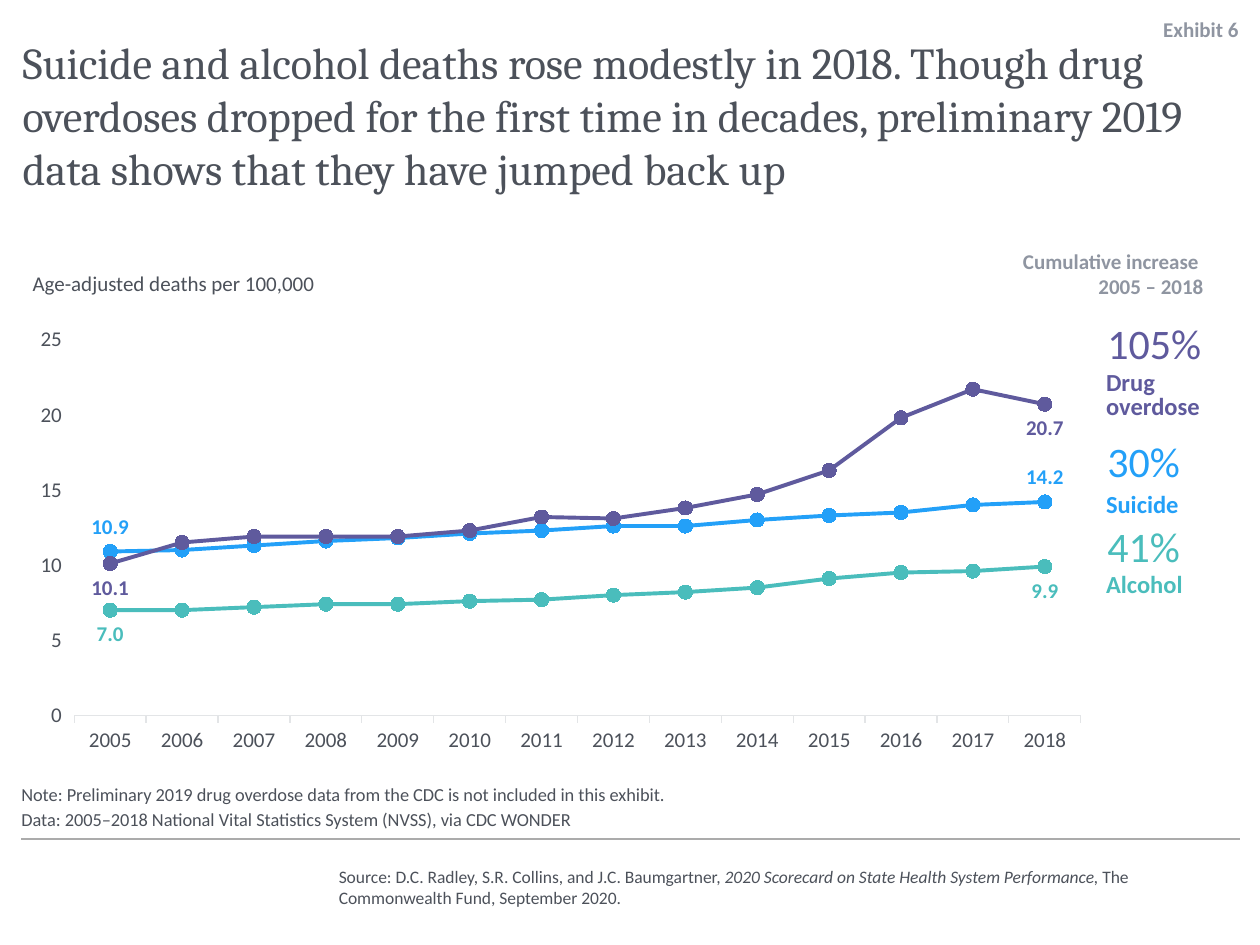
import dataclasses

import pptx
import pptx.chart.data
import pptx.dml.color
import pptx.enum.chart
import pptx.enum.shapes
import pptx.enum.text
import pptx.oxml
import pptx.oxml.ns
import pptx.util
from pptx.util import Inches

ANCHOR = pptx.enum.text.MSO_ANCHOR
ALIGN = pptx.enum.text.PP_ALIGN
LABEL = pptx.enum.chart.XL_LABEL_POSITION


@dataclasses.dataclass(frozen=True)
class Theme:
    """Colours, fonts and type sizes of the slide."""

    ink: str = "4C515A"
    muted: str = "8F95A1"
    rule: str = "ABABAB"
    axis: str = "E3E5E7"
    alcohol: str = "4ABDBC"
    suicide: str = "23A0F8"
    drugs: str = "5F5A9D"
    heading_font: str = "Cambria"
    body_font: str = "Calibri"
    title_size: float = 25.2
    increase_size: float = 24
    cause_size: float = 14
    label_size: float = 12
    note_size: float = 10.5
    source_size: float = 10


THEME = Theme()

YEARS = [str(year) for year in range(2005, 2019)]
DEATH_RATES = [
    ("Alcohol", THEME.alcohol, LABEL.BELOW,
     [7, 7, 7.2, 7.4, 7.4, 7.6, 7.7, 8, 8.2, 8.5, 9.1, 9.5, 9.6, 9.9]),
    ("Suicide", THEME.suicide, LABEL.ABOVE,
     [10.9, 11, 11.3, 11.6, 11.8, 12.1, 12.3, 12.6, 12.6, 13, 13.3, 13.5, 14, 14.2]),
    ("Drug overdose", THEME.drugs, LABEL.BELOW,
     [10.1, 11.5, 11.9, 11.9, 11.9, 12.3, 13.2, 13.1, 13.8, 14.7, 16.3, 19.8, 21.7, 20.7]),
]
INCREASES = [
    ("105%", 2.47, "Drug overdose", 2.9, 0.5, THEME.drugs),
    ("30%", 3.41, "Suicide", 3.83, 0.34, THEME.suicide),
    ("41%", 4.08, "Alcohol", 4.47, 0.34, THEME.alcohol),
]


def rgb(colour):
    """Turn a hex string into a colour value."""
    return pptx.dml.color.RGBColor.from_string(colour)


def style_font(font, size, colour, bold=False, name=THEME.body_font):
    """Set the face, size, weight and colour of a font."""
    font.name = name
    font.size = pptx.util.Pt(size)
    font.bold = bold
    font.color.rgb = rgb(colour)


def add_text(slide, box, paragraphs, size, colour, bold=False, name=THEME.body_font,
             align=ALIGN.LEFT, anchor=ANCHOR.TOP, inset=True, gap=0, leading=None):
    """Add a wrapped text box whose paragraphs are lists of (text, italic) runs."""
    frame = slide.shapes.add_textbox(*map(Inches, box)).text_frame
    frame.word_wrap = True
    frame.vertical_anchor = anchor
    if not inset:
        frame.margin_left = frame.margin_right = frame.margin_top = frame.margin_bottom = 0
    for index, runs in enumerate(paragraphs):
        paragraph = frame.add_paragraph() if index else frame.paragraphs[0]
        paragraph.alignment = align
        if index and gap:
            paragraph.space_before = pptx.util.Pt(gap)
        if leading:
            paragraph.line_spacing = pptx.util.Pt(leading)
        style_font(paragraph.font, size, colour, bold, name)
        for text, italic in runs:
            run = paragraph.add_run()
            run.text = text
            if italic:
                run.font.italic = True


def plain(*lines):
    """Make one upright paragraph of each line."""
    return [[(line, False)] for line in lines]


def add_rule(slide, left, right, top):
    """Add the thin horizontal rule above the source."""
    rule = slide.shapes.add_connector(
        pptx.enum.shapes.MSO_CONNECTOR.STRAIGHT,
        Inches(left), Inches(top), Inches(right), Inches(top))
    rule.line.color.rgb = rgb(THEME.rule)
    rule.line.width = pptx.util.Pt(0.75)
    rule._element.spPr.append(
        pptx.oxml.parse_xml(f'<a:effectLst {pptx.oxml.ns.nsdecls("a")}/>'))


def style_series(series, colour, label_position):
    """Colour one line with its markers and label its first and last points."""
    series.smooth = False
    series.format.line.color.rgb = rgb(colour)
    series.format.line.width = pptx.util.Pt(2.25)
    series.marker.style = pptx.enum.chart.XL_MARKER_STYLE.CIRCLE
    series.marker.size = 8
    series.marker.format.fill.solid()
    series.marker.format.fill.fore_color.rgb = rgb(colour)
    series.marker.format.line.color.rgb = rgb(colour)
    series.data_labels.show_value = False
    for point in (0, len(YEARS) - 1):
        label = series.points[point].data_label
        style_font(label.font, THEME.label_size, colour, bold=True)
        label.position = label_position


def fix_plot_area(chart, **fractions):
    """Pin the inner plot area to fractions of the chart."""
    plot_area = chart._chartSpace.chart.plotArea
    for old in plot_area.findall(pptx.oxml.ns.qn("c:layout")):
        plot_area.remove(old)
    settings = {"layoutTarget": "inner", "xMode": "edge", "yMode": "edge", **fractions}
    body = "".join(f'<c:{tag} val="{value}"/>' for tag, value in settings.items())
    plot_area.insert(0, pptx.oxml.parse_xml(
        f'<c:layout {pptx.oxml.ns.nsdecls("c")}><c:manualLayout>{body}'
        "</c:manualLayout></c:layout>"))


def add_death_chart(slide):
    """Add the line chart of death rates by year."""
    rates = pptx.chart.data.CategoryChartData(number_format="0.0")
    rates.categories = YEARS
    for cause, _, _, values in DEATH_RATES:
        rates.add_series(cause, values)
    chart = slide.shapes.add_chart(
        pptx.enum.chart.XL_CHART_TYPE.LINE_MARKERS,
        *map(Inches, (0.16, 2.52, 8.59, 3.51)), rates).chart
    chart.has_legend = False
    chart.has_title = False
    style_font(chart.font, THEME.source_size, THEME.ink)
    chart.plots[0].vary_by_categories = False
    for series, (_, colour, position, _) in zip(chart.plots[0].series, DEATH_RATES):
        style_series(series, colour, position)

    years, deaths = chart.category_axis, chart.value_axis
    for axis in (years, deaths):
        axis.has_major_gridlines = False
        axis.major_tick_mark = pptx.enum.chart.XL_TICK_MARK.OUTSIDE
        style_font(axis.tick_labels.font, THEME.label_size, THEME.ink)
    years.format.line.color.rgb = rgb(THEME.axis)
    years.format.line.width = pptx.util.Pt(0.75)
    deaths.format.line.fill.background()
    deaths.minimum_scale, deaths.maximum_scale, deaths.major_unit = 0, 25, 5
    deaths.tick_labels.number_format = "0"
    deaths.tick_labels.number_format_is_linked = False
    fix_plot_area(chart, x=0.05, y=0.05, w=0.93, h=0.85)


def add_increases(slide):
    """Add the cumulative increase and the name of each cause of death."""
    add_text(slide, (7.41, 1.92, 2.24, 0.5), plain("Cumulative increase ", "2005 – 2018"),
             THEME.label_size, THEME.muted, bold=True, align=ALIGN.RIGHT)
    for increase, increase_top, cause, cause_top, height, colour in INCREASES:
        add_text(slide, (8.69, increase_top, 1.18, 0.5), plain(increase),
                 THEME.increase_size, colour)
        add_text(slide, (8.68, cause_top, 1.26, height), plain(cause), THEME.cause_size,
                 colour, bold=True, leading=14 if height == 0.5 else None)


def main():
    """Build the slide and save it."""
    deck = pptx.Presentation()
    deck.slide_width, deck.slide_height = Inches(10), Inches(7.5)
    slide = deck.slides.add_slide(deck.slide_layouts[6])

    add_text(slide, (2.59, 6.82, 7.25, 0.44), [[
        ("Source: D.C. Radley, S.R. Collins, and J.C. Baumgartner, ", False),
        ("2020 Scorecard on State Health System Performance, ", True),
        ("The Commonwealth Fund, September 2020.", False),
    ]], THEME.source_size, THEME.ink, anchor=ANCHOR.MIDDLE)
    add_rule(slide, 0.17, 9.84, 6.66)
    add_text(slide, (0.18, 0.39, 9.67, 1.04), plain(
        "Suicide and alcohol deaths rose modestly in 2018. Though drug overdoses dropped "
        "for the first time in decades, preliminary 2019 data shows that they have jumped "
        "back up"), THEME.title_size, THEME.ink, name=THEME.heading_font,
        anchor=ANCHOR.MIDDLE, inset=False)
    add_text(slide, (0.17, 6.09, 9.67, 0.5), plain(
        "Note: Preliminary 2019 drug overdose data from the CDC is not included in this exhibit.",
        "Data: 2005–2018 National Vital Statistics System (NVSS), via CDC WONDER"),
        THEME.note_size, THEME.ink, anchor=ANCHOR.BOTTOM, inset=False, gap=2)
    add_text(slide, (7.96, 0.07, 1.87, 0.33), plain("Exhibit 6"), THEME.label_size,
             THEME.muted, bold=True, align=ALIGN.RIGHT, anchor=ANCHOR.MIDDLE, inset=False)
    add_death_chart(slide)
    add_text(slide, (0.16, 2.1, 2.65, 0.3), plain("Age-adjusted deaths per 100,000"),
             THEME.label_size, THEME.ink)
    add_increases(slide)
    deck.save("out.pptx")


if __name__ == "__main__":
    main()
